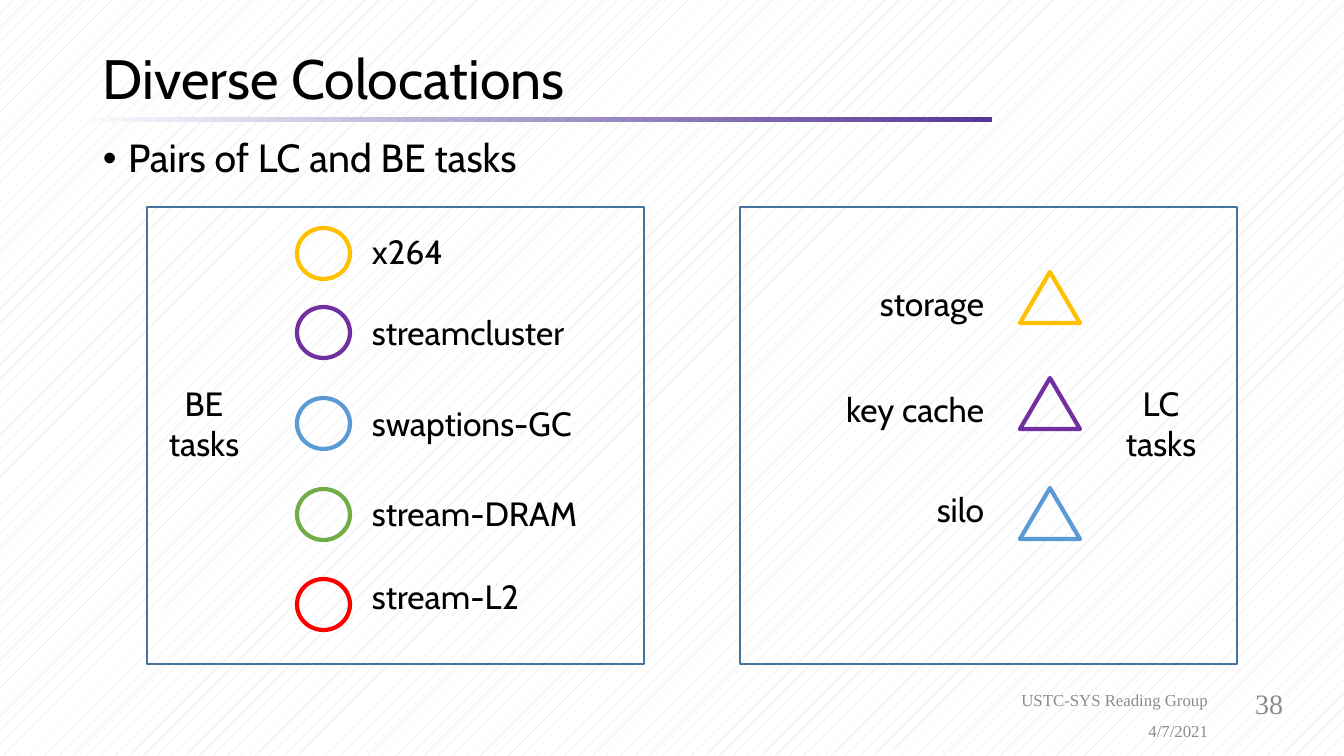
from lxml import etree
from pptx import Presentation
from pptx.dml.color import RGBColor
from pptx.enum.dml import MSO_PATTERN
from pptx.enum.shapes import MSO_SHAPE as SHAPE
from pptx.enum.text import MSO_ANCHOR as ANCHOR, PP_ALIGN as ALIGN
from pptx.oxml.ns import qn
from pptx.util import Pt

PX = 914400 / 100.8
SANS, SERIF = "Cabin", "Times New Roman"
BLACK, GREY, FRAME = "000000", "8C8C8C", "43739E"
YELLOW, PURPLE, BLUE, GREEN, RED = "FFC000", "7030A0", "5B9BD5", "70AD47", "FF0000"

rgb = RGBColor.from_string

presentation = Presentation()
presentation.slide_width = round(1344 * PX)
presentation.slide_height = round(756 * PX)
slide = presentation.slides.add_slide(presentation.slide_layouts[6])


def add_text(text, box, size, align=ALIGN.LEFT, anchor=ANCHOR.TOP, font=SANS, color=BLACK):
    shape = slide.shapes.add_textbox(*[round(n * PX) for n in box])
    frame = shape.text_frame
    frame.word_wrap = True
    frame.vertical_anchor = anchor
    paragraph = frame.paragraphs[0]
    paragraph.text = text
    paragraph.alignment = align
    paragraph.font.size = Pt(size)
    paragraph.font.name = font
    paragraph.font.color.rgb = rgb(color)
    return paragraph


def add_outline(kind, box, color, width):
    shape = slide.shapes.add_shape(kind, *[round(n * PX) for n in box])
    shape.shadow.inherit = False
    shape.fill.background()
    shape.line.color.rgb = rgb(color)
    shape.line.width = Pt(width)
    return shape


# Background pattern
background = slide.background.fill
background.patterned()
background.pattern = MSO_PATTERN.PERCENT_5
background.fore_color.rgb = rgb("D9D9D9")
background.back_color.rgb = rgb("FFFFFF")

# Title and gradient rule
rule = add_outline(SHAPE.RECTANGLE, (93, 117, 899, 5), FRAME, 1)
rule.line.fill.background()
rule.fill.gradient()
rule.fill.gradient_angle = 0
for stop, color in zip(rule.fill.gradient_stops, ("F7FAFD", "543795")):
    stop.color.rgb = rgb(color)
title = add_text("Diverse Colocations", (93, 43, 1159, 76), 39.6, anchor=ANCHOR.MIDDLE)
title.line_spacing = 0.9

# Bullet
bullet = add_text("Pairs of LC and BE tasks", (93, 134, 1159, 60), 28)
bullet.line_spacing = 0.9
bullet.space_before = Pt(10)
properties = bullet._p.get_or_add_pPr()
properties.set("marL", "228600")
properties.set("indent", "-228600")
bullet_font = etree.Element(qn("a:buFont"), typeface="Arial")
bullet_char = etree.Element(qn("a:buChar"), char="•")
properties.find(qn("a:spcBef")).addnext(bullet_font)
bullet_font.addnext(bullet_char)

# Panels with their captions
for caption, panel_left, caption_left in (("BE tasks", 147, 147), ("LC tasks", 740, 1104)):
    add_outline(SHAPE.RECTANGLE, (panel_left, 207, 497, 457), FRAME, 2)
    add_text(caption, (caption_left, 378, 114, 92), 24, ALIGN.CENTER)

# BE tasks: circle, then label
for name, color, circle_top, label_top in (
    ("x264", YELLOW, 228, 226),
    ("streamcluster", PURPLE, 307, 307),
    ("swaptions-GC", BLUE, 398, 398),
    ("stream-DRAM", GREEN, 489, 488),
    ("stream-L2", RED, 579, 571),
):
    add_outline(SHAPE.OVAL, (297, circle_top, 53, 51), color, 3)
    add_text(name, (362, label_top, 240, 50), 24)

# LC tasks: label, then triangle
for name, color, triangle_top, label_top in (
    ("storage", YELLOW, 272, 278),
    ("key cache", PURPLE, 378, 384),
    ("silo", BLUE, 488, 484),
):
    add_outline(SHAPE.ISOSCELES_TRIANGLE, (1020, triangle_top, 60, 51), color, 3)
    add_text(name, (754, label_top, 240, 50), 24, ALIGN.RIGHT)

# Footer
for text, box, size in (
    ("USTC-SYS Reading Group", (764, 687, 454, 26), 12),
    ("4/7/2021", (915, 717, 303, 28), 12),
    ("38", (991, 687, 302, 32), 20),
):
    add_text(text, box, size, ALIGN.RIGHT, ANCHOR.MIDDLE, SERIF, GREY)

presentation.save("out.pptx")
